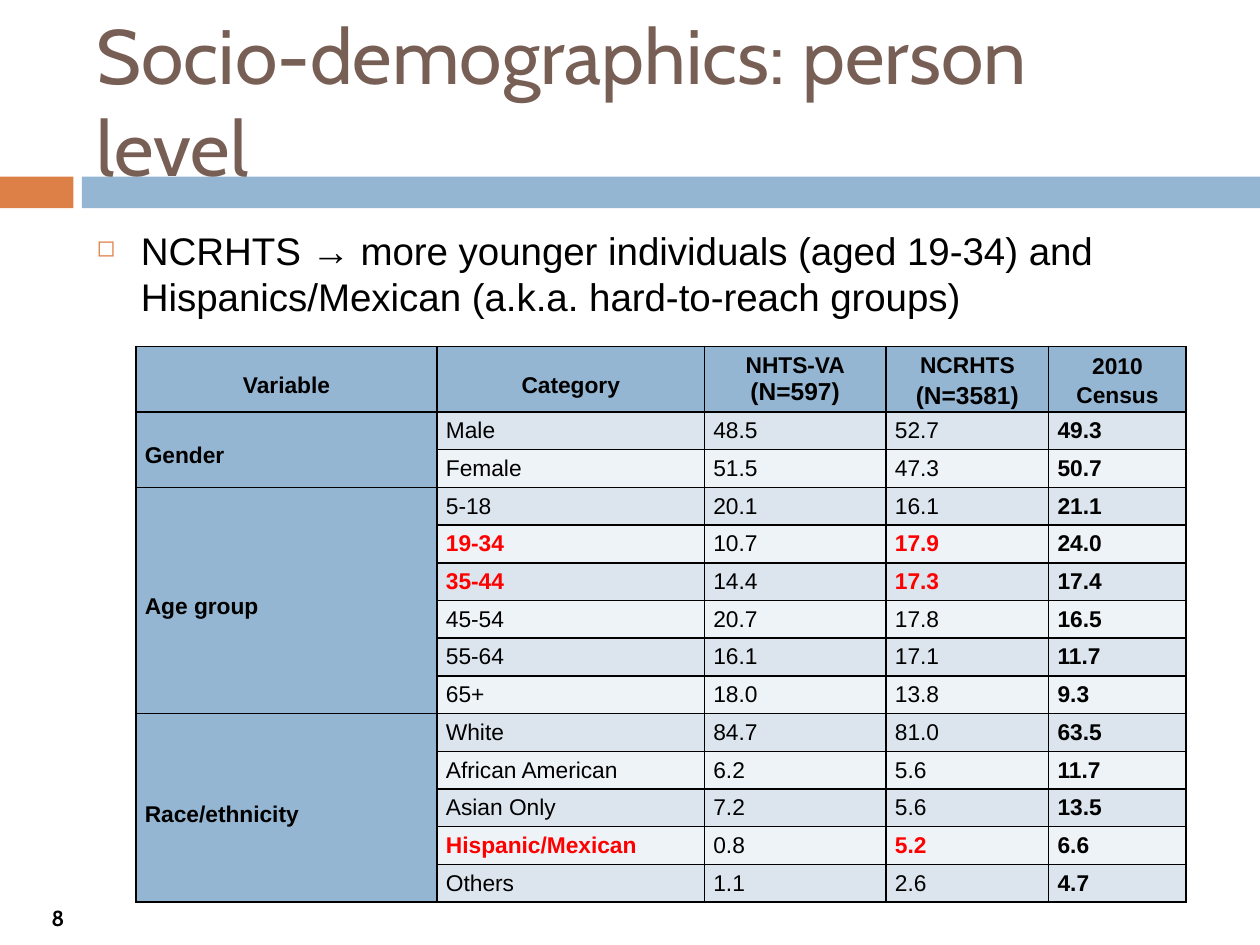
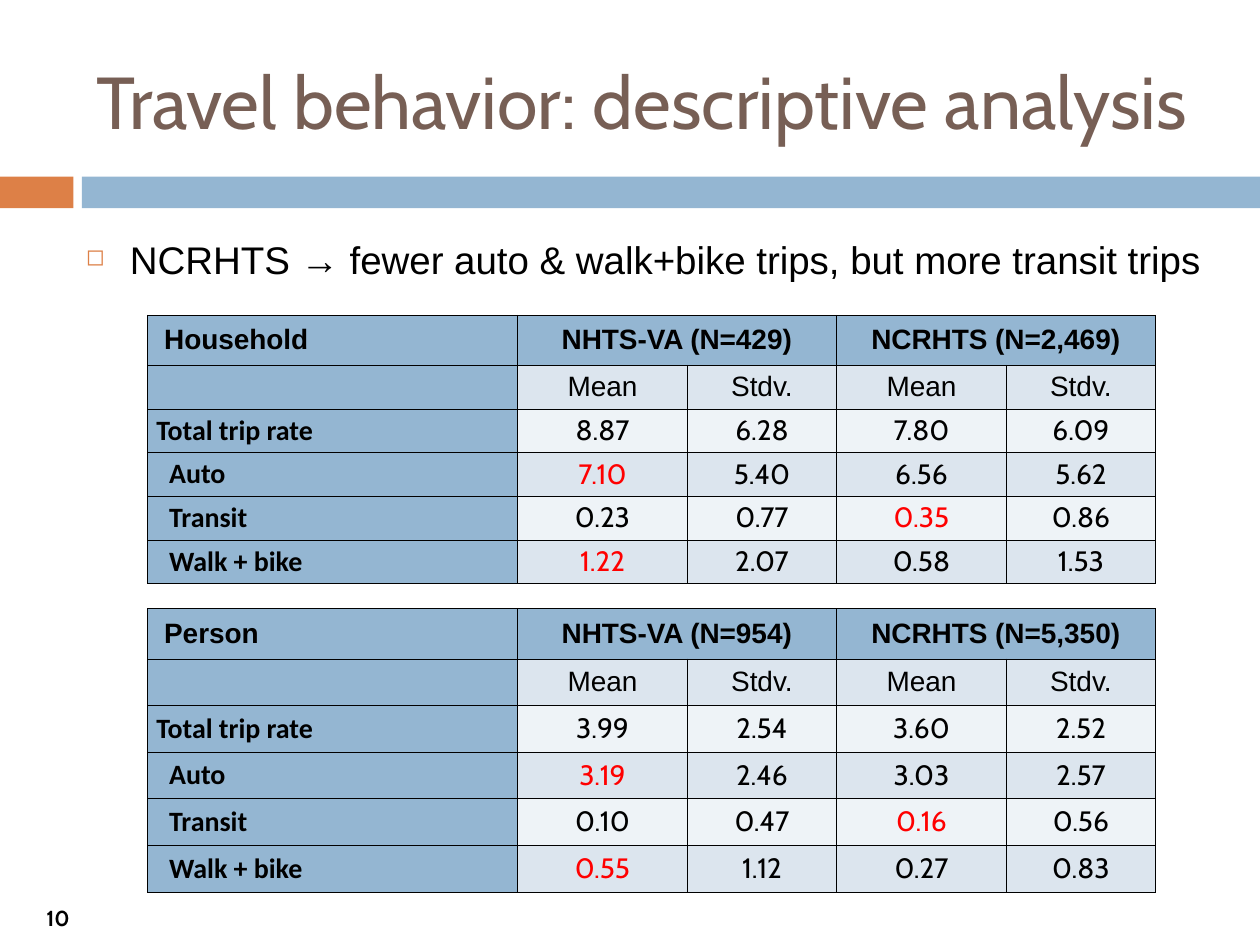
from dataclasses import dataclass

import pptx
import pptx.util
import pptx.dml.color
import pptx.enum.shapes
import pptx.enum.text
import pptx.oxml.ns
from lxml import etree

Cm = pptx.util.Cm
Pt = pptx.util.Pt
RGBColor = pptx.dml.color.RGBColor
qn = pptx.oxml.ns.qn
ALIGN = pptx.enum.text.PP_ALIGN
ANCHOR = pptx.enum.text.MSO_ANCHOR

# Colours
BLUE = RGBColor(0x94, 0xB6, 0xD2)
ORANGE = RGBColor(0xDD, 0x80, 0x47)
BROWN = RGBColor(0x77, 0x5F, 0x55)
DARK = RGBColor(0xDC, 0xE5, 0xEE)
LIGHT = RGBColor(0xEE, 0xF3, 0xF7)
BLACK = RGBColor(0, 0, 0)
RED = RGBColor(0xFF, 0, 0)

PAD = 0.18  # side margin of a table cell, in cm


@dataclass(frozen=True)
class Box:
    left: float
    top: float
    width: float
    height: float

    def place(self) -> tuple:
        return Cm(self.left), Cm(self.top), Cm(self.width), Cm(self.height)


@dataclass(frozen=True)
class Style:
    size: float
    face: str = "Arial"
    bold: bool = False
    color: RGBColor = BLACK


@dataclass(frozen=True)
class Line:
    text: str
    style: Style
    space: float = 1.0


@dataclass(frozen=True)
class Band:
    box: Box
    color: RGBColor


@dataclass(frozen=True)
class Group:
    name: str
    rows: list


@dataclass(frozen=True)
class Trips:
    name: str
    top: float
    row: float
    heads: tuple
    rates: list


BANDS = [
    Band(Box(0, 3.56, 1.48, 0.64), ORANGE),
    Band(Box(1.65, 3.56, 23.75, 0.64), BLUE),
]
TITLE = Box(1.7, 0.64, 22.66, 2.74)
NUMBER = Box(0.43, 18.16, 1.48, 0.69)

# Person table: category, NHTS-VA, NCRHTS, census
GROUPS = [
    Group("Gender", [
        ("Male", "48.5", "52.7", "49.3"),
        ("Female", "51.5", "47.3", "50.7"),
    ]),
    Group("Age group", [
        ("5-18", "20.1", "16.1", "21.1"),
        ("19-34", "10.7", "17.9", "24.0"),
        ("35-44", "14.4", "17.3", "17.4"),
        ("45-54", "20.7", "17.8", "16.5"),
        ("55-64", "16.1", "17.1", "11.7"),
        ("65+", "18.0", "13.8", "9.3"),
    ]),
    Group("Race/ethnicity", [
        ("White", "84.7", "81.0", "63.5"),
        ("African American", "6.2", "5.6", "11.7"),
        ("Asian Only", "7.2", "5.6", "13.5"),
        ("Hispanic/Mexican", "0.8", "5.2", "6.6"),
        ("Others", "1.1", "2.6", "4.7"),
    ]),
]
HARD = {"19-34", "35-44", "Hispanic/Mexican"}

# Trip tables: mean and deviation of both surveys
MODES = ["Total trip rate", "Auto", "Transit", "Walk + bike"]
HIGH = {("Auto", 1), ("Transit", 3), ("Walk + bike", 1)}
TRIPS = [
    Trips("Household", 6.35, 0.88, ("NHTS-VA (N=429)", "NCRHTS (N=2,469)"), [
        ("8.87", "6.28", "7.80", "6.09"),
        ("7.10", "5.40", "6.56", "5.62"),
        ("0.23", "0.77", "0.35", "0.86"),
        ("1.22", "2.07", "0.58", "1.53"),
    ]),
    Trips("Person", 12.27, 0.94, ("NHTS-VA (N=954)", "NCRHTS (N=5,350)"), [
        ("3.99", "2.54", "3.60", "2.52"),
        ("3.19", "2.46", "3.03", "2.57"),
        ("0.10", "0.47", "0.16", "0.56"),
        ("0.55", "1.12", "0.27", "0.83"),
    ]),
]


# Text
def write(par, line: Line, align=ALIGN.LEFT) -> None:
    par.alignment = align
    if line.space != 1:
        par.line_spacing = line.space
    run = par.add_run()
    run.text = line.text
    font = run.font
    font.name = line.style.face
    font.size = Pt(line.style.size)
    font.bold = line.style.bold
    font.color.rgb = line.style.color


def add_text(slide, box: Box, line: Line, align=ALIGN.LEFT, anchor=ANCHOR.MIDDLE):
    frame = slide.shapes.add_textbox(*box.place()).text_frame
    frame.word_wrap = True
    frame.vertical_anchor = anchor
    par = frame.paragraphs[0]
    write(par, line, align)
    return par


def add_point(slide, box: Box, text: str, space: float = 1.0) -> None:
    par = add_text(slide, box, Line(text, Style(22), space), anchor=ANCHOR.TOP)
    par.space_before = Pt(7)
    props = par._p.get_or_add_pPr()
    props.set("marL", str(Cm(0.89)))
    props.set("indent", str(-Cm(0.89)))
    color = etree.SubElement(props, qn("a:buClr"))
    etree.SubElement(color, qn("a:srgbClr"), val=str(ORANGE))
    etree.SubElement(props, qn("a:buSzPct"), val="60000")
    etree.SubElement(props, qn("a:buChar"), char="◻")


# Parts every slide shares
def add_base(deck, title: str, size: float, number: str):
    slide = deck.slides.add_slide(deck.slide_layouts[6])
    for band in BANDS:
        shape = slide.shapes.add_shape(
            pptx.enum.shapes.MSO_SHAPE.RECTANGLE, *band.box.place())
        shape.shadow.inherit = False
        shape.fill.solid()
        shape.fill.fore_color.rgb = band.color
        shape.line.fill.background()
    add_text(slide, TITLE, Line(title, Style(size, "Cabin", color=BROWN)))
    add_text(slide, NUMBER, Line(number, Style(12.4, "Cabin", True)), ALIGN.CENTER)
    return slide


# Tables
def add_grid(slide, left: float, top: float, cols: list, rows: list, rule: float):
    box = Box(left, top, sum(cols), sum(rows))
    grid = slide.shapes.add_table(len(rows), len(cols), *box.place()).table
    grid.first_row = grid.horz_banding = False
    for col, width in zip(grid.columns, cols):
        col.width = Cm(width)
    for row, height in zip(grid.rows, rows):
        row.height = Cm(height)
    for cell in grid.iter_cells():
        cell.margin_top = cell.margin_bottom = 0
        cell.margin_left = cell.margin_right = Cm(PAD)
        cell.vertical_anchor = ANCHOR.MIDDLE
        for side in ("a:lnL", "a:lnR", "a:lnT", "a:lnB"):
            edge = etree.SubElement(
                cell._tc.get_or_add_tcPr(), qn(side), w=str(Pt(rule)))
            fill = etree.SubElement(edge, qn("a:solidFill"))
            etree.SubElement(fill, qn("a:srgbClr"), val=str(BLACK))
        paint(cell, BLUE)
        # Keeps cells without text from stretching their row
        etree.SubElement(
            cell.text_frame.paragraphs[0]._p, qn("a:endParaRPr"), sz="1300")
    return grid


def paint(cell, color: RGBColor) -> None:
    cell.fill.solid()
    cell.fill.fore_color.rgb = color


def fill_cell(cell, lines: list, align=ALIGN.LEFT, color: RGBColor = BLUE,
              pad: float = PAD) -> None:
    paint(cell, color)
    cell.margin_left = Cm(pad)
    frame = cell.text_frame
    for index, line in enumerate(lines):
        par = frame.add_paragraph() if index else frame.paragraphs[0]
        write(par, line, align)


def add_person(slide) -> None:
    head, big = Style(13, bold=True), Style(14, bold=True)
    heads = [
        [Line("Variable", head, 1.5)],
        [Line("Category", head, 1.5)],
        [Line("NHTS-VA", head), Line("(N=597)", big)],
        [Line("NCRHTS", head, 1.15), Line("(N=3581)", big, 1.15)],
        [Line("2010 Census", head, 1.15)],
    ]
    count = sum(len(group.rows) for group in GROUPS)
    grid = add_grid(slide, 2.74, 6.99, [6.07, 5.39, 3.66, 3.28, 2.77],
                    [1.21] + [0.76] * count, 1)
    for col, lines in enumerate(heads):
        fill_cell(grid.cell(0, col), lines, ALIGN.CENTER)
    row = 1
    for group in GROUPS:
        first = grid.cell(row, 0)
        first.merge(grid.cell(row + len(group.rows) - 1, 0))
        fill_cell(first, [Line(group.name, head, 1.5)])
        for values in group.rows:
            for col, text in enumerate(values, 1):
                hot = values[0] in HARD and col in (1, 3)
                style = Style(13, bold=hot or col == 4, color=RED if hot else BLACK)
                fill_cell(grid.cell(row, col), [Line(text, style)],
                          color=DARK if row % 2 else LIGHT)
            row += 1


def add_trips(slide, trips: Trips) -> None:
    head = Style(16, bold=True)
    grid = add_grid(slide, 2.97, trips.top, [7.46] + [3.43, 3] * 2,
                    [1.01] + [trips.row] * 5, 0.25)
    fill_cell(grid.cell(0, 0), [Line(trips.name, head)], pad=PAD + 0.16)
    for col, text in zip((1, 3), trips.heads):
        grid.cell(0, col).merge(grid.cell(0, col + 1))
        fill_cell(grid.cell(0, col), [Line(text, head)], ALIGN.CENTER)
    for col, text in enumerate(["Mean", "Stdv."] * 2, 1):
        fill_cell(grid.cell(1, col), [Line(text, Style(16))], ALIGN.CENTER, DARK)
    for row, (mode, rates) in enumerate(zip(MODES, trips.rates), 2):
        pad = PAD if row == 2 else PAD + 0.26
        fill_cell(grid.cell(row, 0), [Line(mode, Style(16, "Calibri", True))], pad=pad)
        for col, text in enumerate(rates, 1):
            cell = grid.cell(row, col)
            cell.margin_right = 0
            style = Style(16, "Cabin", color=RED if (mode, col) in HIGH else BLACK)
            fill_cell(cell, [Line(text, style)], ALIGN.CENTER,
                      DARK if row % 2 else LIGHT, 0)


def main() -> None:
    deck = pptx.Presentation()
    deck.slide_width, deck.slide_height = Cm(25.4), Cm(19.05)

    # Person level
    slide = add_base(deck, "Socio-demographics: person level", 44, "8")
    add_point(slide, Box(1.7, 4.45, 23.27, 2.74),
              "NCRHTS → more younger individuals (aged 19-34) and "
              "Hispanics/Mexican (a.k.a. hard-to-reach groups)")
    add_person(slide)

    # Travel behavior
    slide = add_base(deck, "Travel behavior: descriptive analysis", 42, "10")
    for trips in TRIPS:
        add_trips(slide, trips)
    add_point(slide, Box(1.48, 4.45, 23.7, 1.7),
              "NCRHTS → fewer auto & walk+bike trips, but more transit trips", 1.2)

    deck.save("out.pptx")


if __name__ == "__main__":
    main()
